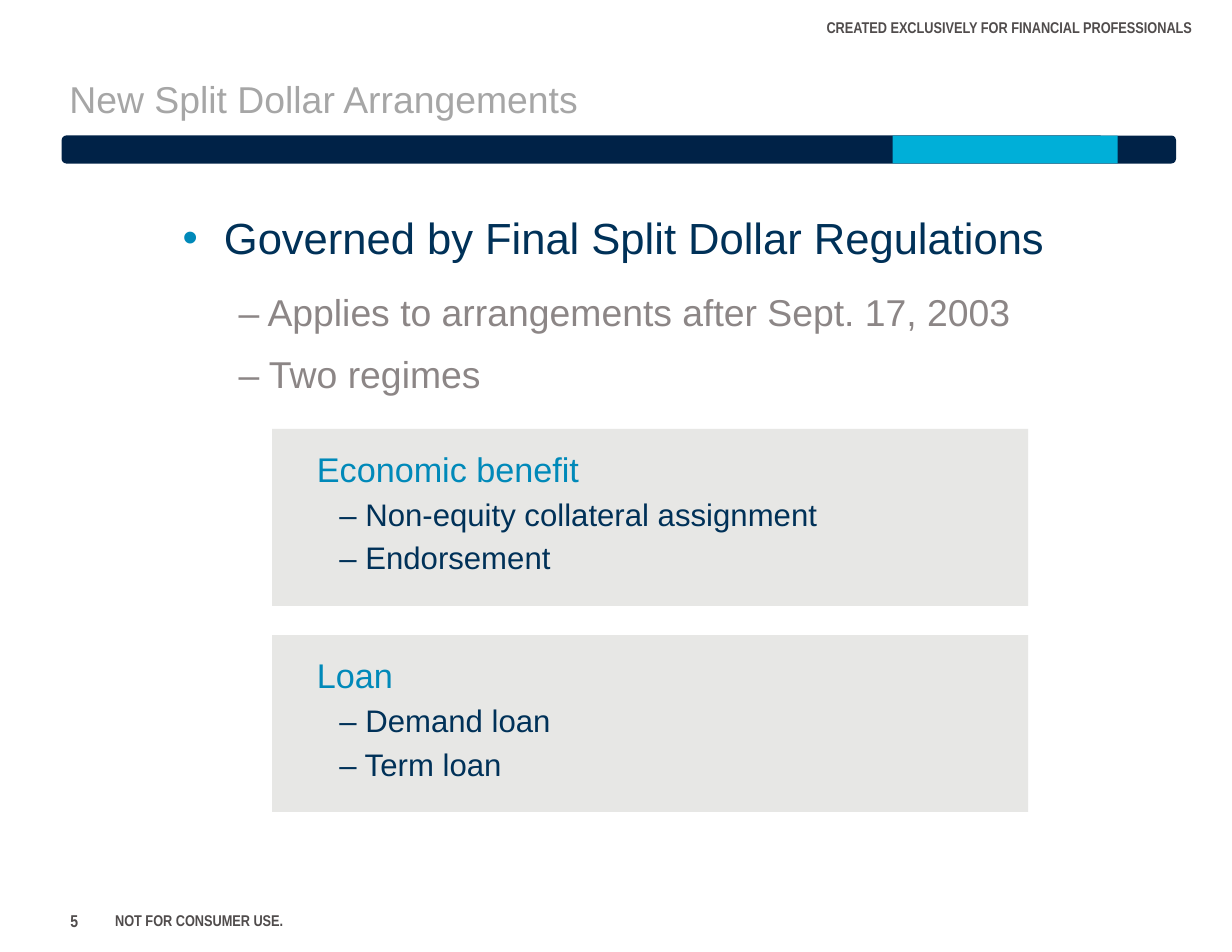
from dataclasses import dataclass

from lxml import etree
from pptx import Presentation
from pptx.dml.color import RGBColor
from pptx.enum.shapes import MSO_SHAPE
from pptx.enum.text import MSO_ANCHOR, PP_ALIGN
from pptx.oxml.ns import qn
from pptx.util import Inches, Pt

RECTANGLE = MSO_SHAPE.RECTANGLE
ROUNDED = MSO_SHAPE.ROUNDED_RECTANGLE
TOP, MIDDLE, BOTTOM = MSO_ANCHOR.TOP, MSO_ANCHOR.MIDDLE, MSO_ANCHOR.BOTTOM
LEFT, CENTER = PP_ALIGN.LEFT, PP_ALIGN.CENTER

COLORS = {
    "bar": "002247", "accent": "00AFD8", "navy": "003158", "blue": "0089B9",
    "gray": "8C8686", "title": "A6A6A6", "small": "504C4C", "panel": "C4C4C0",
}


@dataclass
class Style:
    size: float
    color: str
    font: str = "Arial"
    bold: bool = False
    margin: float = 0
    indent: float = 0
    before_percent: int = 0
    after: float = 0
    line_points: float = 0
    bullet_color: str = ""
    align: PP_ALIGN = LEFT


@dataclass
class Line:
    text: str
    style: Style


@dataclass
class Panel:
    top: float
    heading: str
    items: list[str]


TITLE = Style(24, "title")
HEADER = Style(10, "small", "Arial Narrow", True, align=CENTER)
FOOTER = Style(10, "small", "Arial Narrow", True)
NUMBER = Style(11, "small", "Arial Narrow", True)
MAIN = Style(28, "navy", margin=0.75, indent=-0.37, before_percent=20,
             after=12, line_points=29, bullet_color="blue")
SUB = Style(24, "gray", margin=1.26, indent=-0.38, before_percent=20, after=6)
HEADING = Style(22, "blue", margin=1.25, indent=-0.25, before_percent=20)
ITEM = Style(20, "navy", margin=1.44, indent=-0.24, before_percent=20)

PANELS = [
    Panel(3.83, "Economic benefit",
          ["– Non-equity collateral assignment", "– Endorsement"]),
    Panel(5.67, "Loan", ["– Demand loan", "– Term loan"]),
]


def rgb(name: str) -> RGBColor:
    return RGBColor.from_string(COLORS[name])


def format_paragraph(para, style: Style) -> None:
    para.alignment = style.align
    para.space_after = Pt(style.after)
    if style.line_points:
        para.line_spacing = Pt(style.line_points)
    para.space_before = Pt(0)
    properties = para._p.get_or_add_pPr()
    properties.set("marL", str(Inches(style.margin)))
    properties.set("indent", str(Inches(style.indent)))
    if style.before_percent:
        # Space before is relative to the line height
        before = properties.find(qn("a:spcBef"))
        before.clear()
        etree.SubElement(before, qn("a:spcPct"), val=str(style.before_percent * 1000))
    if style.bullet_color:
        color = etree.SubElement(properties, qn("a:buClr"))
        etree.SubElement(color, qn("a:srgbClr"), val=COLORS[style.bullet_color])
        etree.SubElement(properties, qn("a:buFont"), typeface="Arial")
        etree.SubElement(properties, qn("a:buChar"), char="•")
    for span in para.runs:
        span.font.name = style.font
        span.font.size = Pt(style.size)
        span.font.bold = style.bold
        span.font.color.rgb = rgb(style.color)


def add_text(page, left: float, top: float, width: float, height: float,
             lines: list[Line], anchor=TOP, inset: bool = False) -> None:
    box = page.shapes.add_textbox(Inches(left), Inches(top), Inches(width), Inches(height))
    frame = box.text_frame
    frame.word_wrap = True
    frame.vertical_anchor = anchor
    frame.margin_left = frame.margin_right = Inches(0.1 if inset else 0)
    frame.margin_top = frame.margin_bottom = Inches(0.05 if inset else 0)
    frame.text = "\n".join(line.text for line in lines)
    for para, line in zip(frame.paragraphs, lines):
        format_paragraph(para, line.style)


def add_block(page, kind, left: float, top: float, width: float, height: float,
              color: str, opacity: int = 100) -> None:
    block = page.shapes.add_shape(kind, Inches(left), Inches(top),
                                  Inches(width), Inches(height))
    block.shadow.inherit = False
    block.fill.solid()
    block.fill.fore_color.rgb = rgb(color)
    block.line.fill.background()
    if opacity < 100:
        fill = block._element.spPr.find(qn("a:solidFill"))
        etree.SubElement(fill[0], qn("a:alpha"), val=str(opacity * 1000))


def add_panel(page, panel: Panel) -> None:
    add_block(page, RECTANGLE, 2.43, panel.top, 6.75, 1.58, "panel", opacity=40)
    lines = [Line(panel.heading, HEADING)] + [Line(item, ITEM) for item in panel.items]
    add_text(page, 1.83, panel.top + 0.17, 6.91, 1.33, lines)


def main() -> None:
    deck = Presentation()
    deck.slide_width, deck.slide_height = Inches(11), Inches(8.5)
    page = deck.slides.add_slide(deck.slide_layouts[6])

    # Header line and divider bar
    add_text(page, 7.05, 0.02, 3.92, 0.44,
             [Line("CREATED EXCLUSIVELY FOR FINANCIAL PROFESSIONALS", HEADER)],
             MIDDLE, inset=True)
    add_block(page, ROUNDED, 0.55, 1.21, 9.95, 0.25, "bar")
    add_block(page, RECTANGLE, 7.97, 1.21, 2.01, 0.25, "accent")

    # Title and main points
    add_text(page, 0.62, 0.17, 9.88, 0.91,
             [Line("New Split Dollar Arrangements", TITLE)], BOTTOM)
    add_text(page, 1.25, 1.95, 8.33, 1.88, [
        Line("Governed by Final Split Dollar Regulations", MAIN),
        Line("– Applies to arrangements after Sept. 17, 2003", SUB),
        Line("– Two regimes", SUB),
    ])

    # The two regimes
    for panel in PANELS:
        add_panel(page, panel)

    # Footer
    add_text(page, 0.93, 7.95, 4.5, 0.54,
             [Line("NOT FOR CONSUMER USE.", FOOTER)], MIDDLE, inset=True)
    add_text(page, 0.53, 7.95, 0.45, 0.54, [Line("5", NUMBER)], MIDDLE, inset=True)

    deck.save("out.pptx")


if __name__ == "__main__":
    main()
